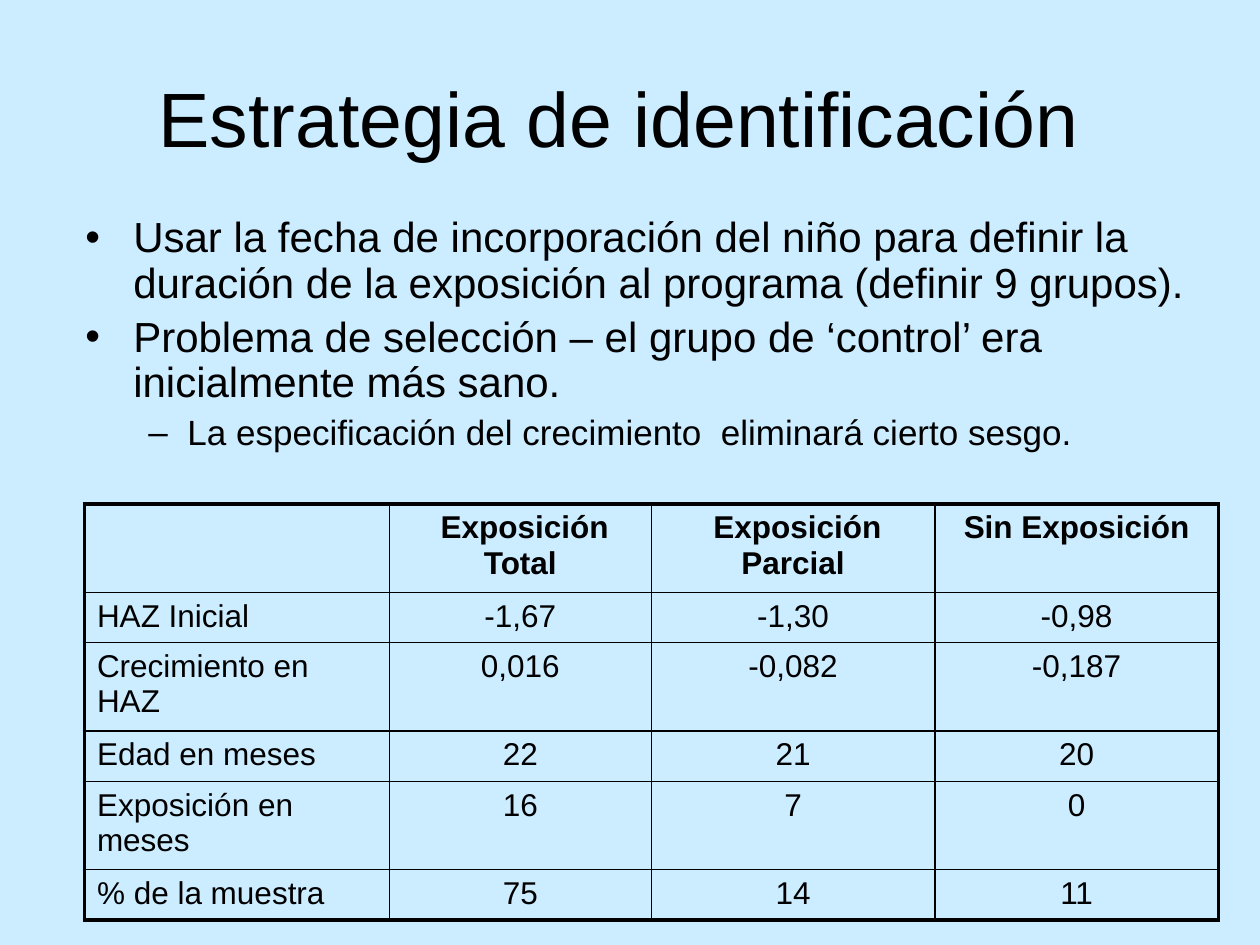
import pptx
import pptx.util
import pptx.dml.color
import pptx.enum.text
from lxml import etree
from pptx.oxml.ns import qn

Inches, Pt = pptx.util.Inches, pptx.util.Pt
ALIGN = pptx.enum.text.PP_ALIGN
ANCHOR = pptx.enum.text.MSO_ANCHOR

BACKGROUND, INK, FONT = "CCECFF", "000000", "Arial"
THIN, THICK = 1, 2.25

TITLE = "Estrategia de identificación "
POINTS = [
    (0, "Usar la fecha de incorporación del niño para definir la duración "
        "de la exposición al programa (definir 9 grupos)."),
    (0, "Problema de selección – el grupo de ‘control’ era inicialmente más sano."),
    (1, "La especificación del crecimiento  eliminará cierto sesgo."),
]
LEVELS = [
    {"bullet": "•", "size": 24, "margin": 0.38, "hanging": 0.38, "after": 5},
    {"bullet": "–", "size": 20, "margin": 0.81, "hanging": 0.31, "after": 4},
]
GROUPS = [
    ("", " Exposición Total", " Exposición Parcial", "Sin Exposición"),
    ("HAZ Inicial", "-1,67", "-1,30", "-0,98"),
    ("Crecimiento en HAZ", "0,016", "-0,082", "-0,187"),
    ("Edad en meses", "22", "21", "20"),
    ("Exposición en meses", "16", "7", "0"),
    ("% de la muestra", "75", "14", "11"),
]
COLUMN_WIDTHS = [2.42, 2.08, 2.25, 2.25]
ROW_HEIGHTS = [0.66, 0.38] * 3


def rgb(value):
    return pptx.dml.color.RGBColor.from_string(value)


def style(paragraph, size, bold=False):
    paragraph.font.name = FONT
    paragraph.font.size = Pt(size)
    paragraph.font.bold = bold
    paragraph.font.color.rgb = rgb(INK)


def add_text_frame(slide, left, top, width, height, anchor):
    frame = slide.shapes.add_textbox(
        Inches(left), Inches(top), Inches(width), Inches(height)).text_frame
    frame.word_wrap = True
    frame.vertical_anchor = anchor
    return frame


def add_bullet(paragraph, level):
    properties = paragraph._p.get_or_add_pPr()
    properties.set("marL", str(Inches(level["margin"])))
    properties.set("indent", str(-Inches(level["hanging"])))
    etree.SubElement(properties, qn("a:buFont")).set("typeface", FONT)
    etree.SubElement(properties, qn("a:buChar")).set("char", level["bullet"])


def add_points(slide):
    frame = add_text_frame(slide, 0.58, 1.67, 9, 1.83, ANCHOR.TOP)
    for index, (depth, text) in enumerate(POINTS):
        level = LEVELS[depth]
        paragraph = frame.paragraphs[0] if index == 0 else frame.add_paragraph()
        paragraph.text = text
        paragraph.level = depth
        paragraph.line_spacing = 0.9
        paragraph.space_after = Pt(level["after"])
        style(paragraph, level["size"])
        add_bullet(paragraph, level)


def set_borders(cell, widths):
    properties = cell._tc.get_or_add_tcPr()
    for index, (side, width) in enumerate(widths.items()):
        line = etree.Element(qn(f"a:ln{side}"), w=str(Pt(width)))
        fill = etree.SubElement(line, qn("a:solidFill"))
        etree.SubElement(fill, qn("a:srgbClr")).set("val", INK)
        properties.insert(index, line)


def add_groups(slide):
    last_row, last_column = len(GROUPS) - 1, len(COLUMN_WIDTHS) - 1
    table = slide.shapes.add_table(
        len(GROUPS), len(COLUMN_WIDTHS), Inches(0.67), Inches(4),
        Inches(sum(COLUMN_WIDTHS)), Inches(sum(ROW_HEIGHTS))).table
    table.horz_banding = False
    for column, width in zip(table.columns, COLUMN_WIDTHS):
        column.width = Inches(width)
    for r, (values, height) in enumerate(zip(GROUPS, ROW_HEIGHTS)):
        table.rows[r].height = Inches(height)
        for c, value in enumerate(values):
            cell = table.cell(r, c)
            cell.fill.background()
            cell.text = value
            paragraph = cell.text_frame.paragraphs[0]
            paragraph.alignment = ALIGN.CENTER if c else ALIGN.LEFT
            style(paragraph, 18, bold=r == 0)
            set_borders(cell, {
                "L": THICK if c == 0 else THIN,
                "R": THICK if c == last_column else THIN,
                "T": THICK if r == 0 else THIN,
                "B": THICK if r == last_row else THIN,
            })


def main():
    deck = pptx.Presentation()
    deck.slide_width, deck.slide_height = Inches(10), Inches(7.5)
    slide = deck.slides.add_slide(deck.slide_layouts[6])
    slide.background.fill.solid()
    slide.background.fill.fore_color.rgb = rgb(BACKGROUND)

    title = add_text_frame(slide, 0.5, 0.3, 9, 1.25, ANCHOR.MIDDLE).paragraphs[0]
    title.text = TITLE
    title.alignment = ALIGN.CENTER
    style(title, 44)

    add_points(slide)
    add_groups(slide)
    deck.save("out.pptx")


if __name__ == "__main__":
    main()
